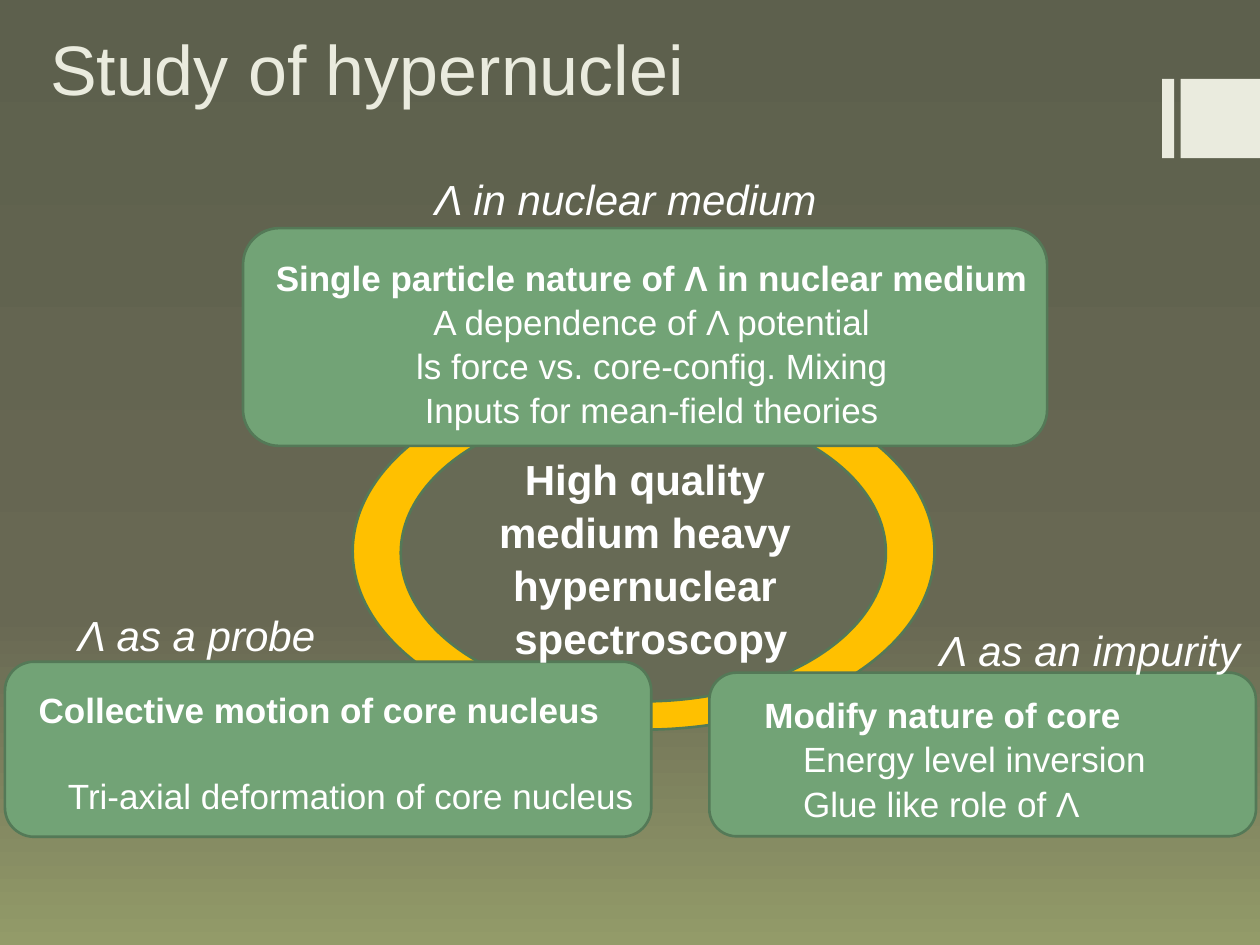
from copy import deepcopy

from pptx import Presentation
from pptx import util as u
from pptx.dml.color import RGBColor
from pptx.enum import shapes, text
from pptx.oxml.ns import qn

WHITE = RGBColor(0xFF, 0xFF, 0xFF)
IVORY = RGBColor(0xEA, 0xEB, 0xDE)
OLIVE = RGBColor(0x67, 0x6A, 0x55)
GOLD = RGBColor(0xFF, 0xC0, 0x00)
GREEN = RGBColor(0x72, 0xA3, 0x76)
DARK_GREEN = RGBColor(0x54, 0x79, 0x57)
BACKGROUND = [
    (0, RGBColor(0x5D, 0x60, 0x4D)),
    (0.65, RGBColor(0x68, 0x68, 0x53)),
    (1, RGBColor(0x93, 0x9B, 0x69)),
]
LEFT, CENTER = text.PP_ALIGN.LEFT, text.PP_ALIGN.CENTER
SHAPE = shapes.MSO_SHAPE


def add_filled(parent, kind, place, fill, line=None):
    shape = parent.shapes.add_shape(kind, *map(u.Cm, place))
    shape.shadow.inherit = False
    shape.fill.solid()
    shape.fill.fore_color.rgb = fill
    if line is None:
        shape.line.fill.background()
    else:
        shape.line.color.rgb = line
        shape.line.width = u.Pt(1.5)
    return shape


def add_text(place, lines, size, color=WHITE, spacing=1.05):
    """Write lines of (wording, style); style may hold bold, italic, align, indent, before."""
    box = page.shapes.add_textbox(*map(u.Cm, place))
    frame = box.text_frame
    frame.word_wrap = False
    for index, (wording, style) in enumerate(lines):
        para = frame.paragraphs[0] if index == 0 else frame.add_paragraph()
        para.text = wording
        para.alignment = style.get("align", LEFT)
        para.line_spacing = spacing
        para.space_before = u.Pt(style.get("before", 0))
        para.font.name = "Arial"
        para.font.size = u.Pt(size)
        para.font.color.rgb = color
        para.font.bold = style.get("bold", False)
        para.font.italic = style.get("italic", False)
        if "indent" in style:
            para._p.get_or_add_pPr().set("marL", str(u.Cm(style["indent"])))
    return box


deck = Presentation()
deck.slide_width, deck.slide_height = u.Cm(25.4), u.Cm(19.05)
page = deck.slides.add_slide(deck.slide_layouts[6])

# Background gradient, top to bottom, with a third stop
backdrop = page.background.fill
backdrop.gradient()
backdrop.gradient_angle = 270
stop_list = page.element.find(".//" + qn("a:gsLst"))
stop_list.append(deepcopy(stop_list[-1]))
for stop, (position, color) in zip(backdrop.gradient_stops, BACKGROUND):
    stop.position = position
    stop.color.rgb = color

# Corner bars
for left, width in [(23.43, 0.24), (23.8, 1.6)]:
    add_filled(page, SHAPE.RECTANGLE, (left, 1.59, width, 1.6), IVORY)

# Ring linking the three topics
ring = page.shapes.add_group_shape()
add_filled(ring, SHAPE.OVAL, (7.11, 7.52, 11.73, 7.19), GOLD, DARK_GREEN)
add_filled(ring, SHAPE.OVAL, (8.08, 8.15, 9.78, 5.99), OLIVE, DARK_GREEN)

# Topic cards
for place in [
    (14.3, 13.56, 11.02, 3.3),
    (0.1, 13.34, 13.03, 3.53),
    (4.9, 4.6, 16.21, 4.39),
]:
    add_filled(page, SHAPE.ROUNDED_RECTANGLE, place, GREEN, DARK_GREEN)

title = add_text((0.76, -0.86, 20.32, 3.2), [("Study of hypernuclei", {})], 40, IVORY, 1)
title.text_frame.vertical_anchor = text.MSO_ANCHOR.BOTTOM
title.text_frame.word_wrap = True

hub_lines = ["High quality ", "medium heavy ", "hypernuclear ", "spectroscopy"]
hub_style = {"bold": True, "align": CENTER}
add_text((9.78, 8.97, 6.68, 4.37), [(line, hub_style) for line in hub_lines], 24)

heading = {"bold": True}
centered = {"align": CENTER}
add_text((5.31, 5, 15.77, 4.45), [
    ("Single particle nature of Λ in nuclear medium", heading),
    ("A dependence of Λ potential", centered),
    ("ls force vs. core-config. Mixing", centered),
    ("Inputs for mean-field theories", centered),
], 20)
add_text((0.53, 13.72, 12.6, 3.68), [
    ("Collective motion of core nucleus", heading),
    ("Tri-axial deformation of core nucleus", {"indent": 0.59, "before": 24}),
], 20)
add_text((15.16, 13.82, 8.28, 2.82), [
    ("Modify nature of core", heading),
    ("Energy level inversion", {"indent": 0.78}),
    ("Glue like role of Λ", {"indent": 0.78}),
], 20)

# Captions above the cards
for wording, left, top, width in [
    ("Λ in nuclear medium", 8.51, 3.33, 8.33),
    ("Λ as an impurity", 18.69, 12.42, 6.65),
    ("Λ as a probe", 1.32, 12.12, 5.38),
]:
    add_text((left, top, width, 1.27), [(wording, {"italic": True})], 24)

deck.save("out.pptx")
